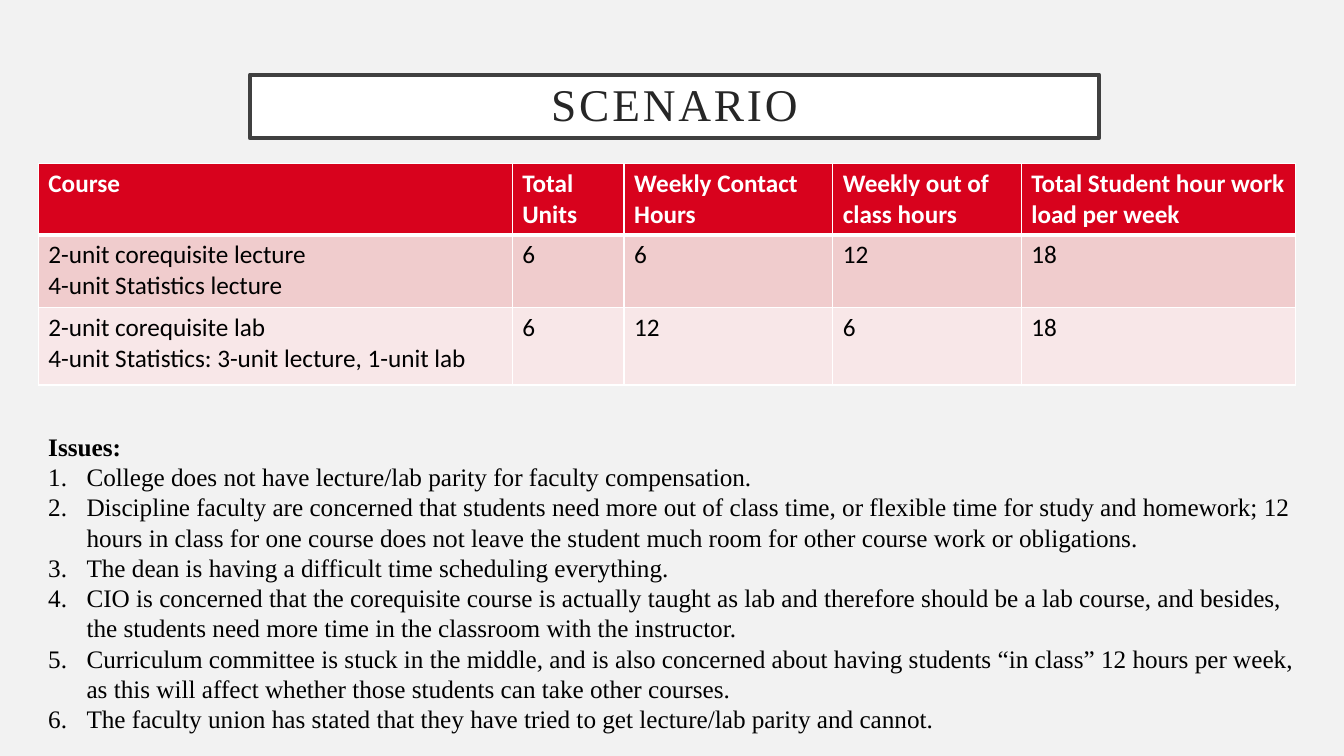
"""Build the corequisite scenario slide: a title, a workload table and a numbered list of issues."""
from dataclasses import dataclass

from lxml import etree
from pptx import Presentation
from pptx import util as u
from pptx.dml.color import RGBColor
from pptx.enum import text
from pptx.oxml.ns import qn

PX = u.Inches(1) // 100


@dataclass(frozen=True)
class Theme:
    background: str = "F2F2F2"
    white: str = "FFFFFF"
    frame: str = "404040"
    title: str = "262626"
    body: str = "000000"
    header: str = "D8021D"
    bands: tuple = ("F0CCCD", "F8E7E8")
    serif: str = "Times New Roman"
    sans: str = "Calibri"
    title_size: float = 32.4
    body_size: float = 18


T = Theme()


def add_run(p, words, font, size, color, bold=False):
    """Add one formatted run to a paragraph."""
    r = p.add_run()
    r.text = words
    r.font.name, r.font.size, r.font.bold = font, u.Pt(size), bold
    r.font.color.rgb = RGBColor.from_string(color)
    return r


def add_border(cell, side, points):
    """Draw one white edge of a table cell."""
    ln = etree.SubElement(cell._tc.get_or_add_tcPr(), qn(f"a:ln{side}"), w=str(u.Pt(points)))
    fill = etree.SubElement(ln, qn("a:solidFill"))
    etree.SubElement(fill, qn("a:srgbClr"), val=T.white)


prs = Presentation()
prs.slide_width, prs.slide_height = 1333 * PX, 750 * PX
s = prs.slides.add_slide(prs.slide_layouts[5])
s.background.fill.solid()
s.background.fill.fore_color.rgb = RGBColor.from_string(T.background)

title = s.shapes.title
title.left, title.top, title.width, title.height = 248 * PX, 74 * PX, 842 * PX, 63 * PX
title.fill.solid()
title.fill.fore_color.rgb = RGBColor.from_string(T.white)
title.line.color.rgb = RGBColor.from_string(T.frame)
title.line.width = u.Pt(3)
tf = title.text_frame
tf.word_wrap = True
tf.auto_size = text.MSO_AUTO_SIZE.NONE
tf.vertical_anchor = text.MSO_ANCHOR.MIDDLE
tf.margin_left = tf.margin_right = 30 * PX
tf.margin_top = tf.margin_bottom = 20 * PX
p = tf.paragraphs[0]
p.alignment = text.PP_ALIGN.CENTER
p.line_spacing = 0.9
r = add_run(p, "SCENARIO", T.serif, T.title_size, T.title)
r.font._element.set("spc", "200")

rows = [
    ["Course", "Total Units", "Weekly Contact Hours", "Weekly out of class hours",
     "Total Student hour work load per week"],
    ["2-unit corequisite lecture\n4-unit Statistics lecture", "6", "6", "12", "18"],
    ["2-unit corequisite lab\n4-unit Statistics: 3-unit lecture, 1-unit lab", "6", "12", "6", "18"],
]
widths = [470, 111, 207, 187, 272]
heights = [71, 72, 77]
table = s.shapes.add_table(len(rows), len(widths), 38 * PX, 162 * PX,
                           sum(widths) * PX, sum(heights) * PX).table
for column, width in zip(table.columns, widths):
    column.width = width * PX
for i, (values, height, color) in enumerate(zip(rows, heights, (T.header, *T.bands))):
    table.rows[i].height = height * PX
    is_header = i == 0
    for j, value in enumerate(values):
        cell = table.cell(i, j)
        for side, points in (("L", 1), ("R", 1), ("T", 3 if i == 1 else 1), ("B", 3 if is_header else 1)):
            add_border(cell, side, points)
        cell.fill.solid()
        cell.fill.fore_color.rgb = RGBColor.from_string(color)
        tf = cell.text_frame
        for k, line in enumerate(value.split("\n")):
            p = tf.add_paragraph() if k else tf.paragraphs[0]
            add_run(p, line, T.sans, T.body_size, T.white if is_header else T.body, is_header)

issues = [
    "College does not have lecture/lab parity for faculty compensation.",
    "Discipline faculty are concerned that students need more out of class time, or flexible time for "
    "study and homework; 12 hours in class for one course does not leave the student much room for "
    "other course work or obligations.",
    "The dean is having a difficult time scheduling everything.",
    "CIO is concerned that the corequisite course is actually taught as lab and therefore should be a "
    "lab course, and besides, the students need more time in the classroom with the instructor.",
    "Curriculum committee is stuck in the middle, and is also concerned about having students "
    "“in class” 12 hours per week, as this will affect whether those students can take other courses.",
    "The faculty union has stated that they have tried to get lecture/lab parity and cannot.",
]
tf = s.shapes.add_textbox(38 * PX, 423 * PX, 1262 * PX, 313 * PX).text_frame
tf.word_wrap = True
tf.auto_size = text.MSO_AUTO_SIZE.SHAPE_TO_FIT_TEXT
add_run(tf.paragraphs[0], "Issues:", T.serif, T.body_size, T.body, True)
for issue in issues:
    p = tf.add_paragraph()
    pPr = p._p.get_or_add_pPr()
    pPr.set("marL", str(38 * PX))
    pPr.set("indent", str(-38 * PX))
    etree.SubElement(pPr, qn("a:buFont"), typeface="+mj-lt")
    etree.SubElement(pPr, qn("a:buAutoNum"), type="arabicPeriod")
    add_run(p, issue, T.serif, T.body_size, T.body)

prs.save("out.pptx")
